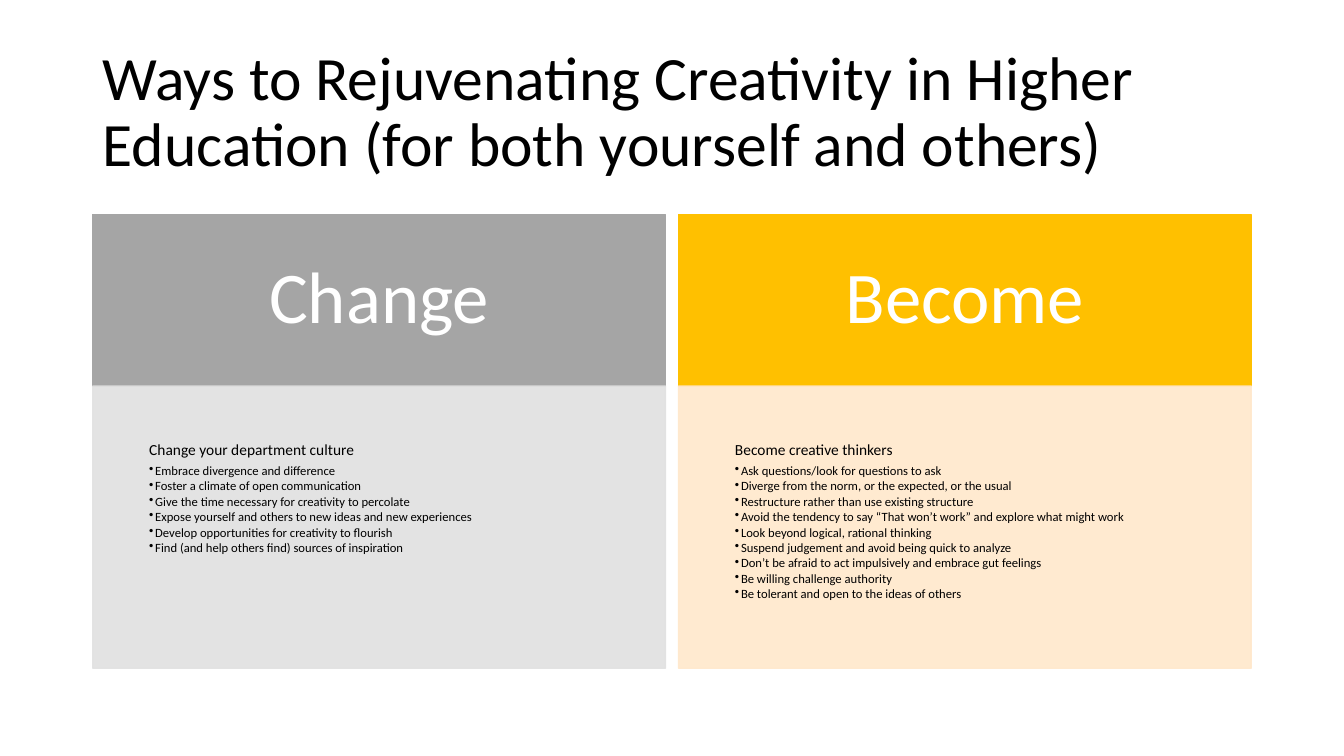
from dataclasses import dataclass

import pptx
import pptx.dml.color
import pptx.enum.shapes
import pptx.enum.text
import pptx.oxml.ns
import pptx.util
from lxml import etree

Inches = pptx.util.Inches
Pt = pptx.util.Pt
ALIGN = pptx.enum.text.PP_ALIGN
ANCHOR = pptx.enum.text.MSO_ANCHOR


@dataclass
class Panel:
    head: str
    lead: str
    points: list[str]
    dark: str
    pale: str


PANELS = [
    Panel("Change", "Change your department culture", [
        "Embrace divergence and difference",
        "Foster a climate of open communication",
        "Give the time necessary for creativity to percolate",
        "Expose yourself and others to new ideas and new experiences",
        "Develop opportunities for creativity to flourish",
        "Find (and help others find) sources of inspiration",
    ], "A5A5A5", "E1E1E1"),
    Panel("Become", "Become creative thinkers", [
        "Ask questions/look for questions to ask",
        "Diverge from the norm, or the expected, or the usual",
        "Restructure rather than use existing structure",
        "Avoid the tendency to say “That won’t work” and explore what might work",
        "Look beyond logical, rational thinking",
        "Suspend judgement and avoid being quick to analyze",
        "Don’t be afraid to act impulsively and embrace gut feelings",
        "Be willing challenge authority",
        "Be tolerant and open to the ideas of others",
    ], "FFC000", "FFE8CB"),
]
LEFT, TOP, WIDTH, STEP = 0.92, 2.13, 5.68, 5.81
HEAD, BODY = 1.7, 2.8


def color(code: str):
    return pptx.dml.color.RGBColor.from_string(code)


def setup(frame, anchor, side: float, edge: float) -> None:
    """Set wrapping, anchor and margins of a text frame."""
    form = {
        "word_wrap": True, "vertical_anchor": anchor,
        "margin_left": Inches(side), "margin_right": Inches(side),
        "margin_top": Inches(edge), "margin_bottom": Inches(edge),
    }
    for name, value in form.items():
        setattr(frame, name, value)


def write(para, text: str, size: float, ink: str = "000000",
          align=ALIGN.LEFT, after: float = 0) -> None:
    """Fill one paragraph with a single run."""
    form = {"alignment": align, "line_spacing": 0.9, "space_after": Pt(after)}
    for name, value in form.items():
        setattr(para, name, value)
    run = para.add_run()
    run.text = text
    for name, value in {"name": "Calibri", "size": Pt(size)}.items():
        setattr(run.font, name, value)
    run.font.color.rgb = color(ink)


def bullet(para) -> None:
    """Add a bullet with a hanging indent."""
    para.level = 1
    props = para._p.get_or_add_pPr()
    props.set("marL", str(Inches(0.06)))
    props.set("indent", str(-Inches(0.06)))
    etree.SubElement(props, pptx.oxml.ns.qn("a:buChar"), char="•")


def block(slide, left: float, top: float, height: float, tint: str,
          alpha: int = 100):
    """Draw a rectangle whose fill and line share one colour."""
    shape = slide.shapes.add_shape(
        pptx.enum.shapes.MSO_SHAPE.RECTANGLE,
        Inches(left), Inches(top), Inches(WIDTH), Inches(height))
    shape.shadow.inherit = False
    shape.line.width = Pt(1)
    for fill in (shape.fill, shape.line.fill):
        fill.solid()
        fill.fore_color.rgb = color(tint)
    if alpha < 100:
        tag = pptx.oxml.ns.qn("a:srgbClr")
        for node in shape._element.spPr.iter(tag):
            etree.SubElement(node, pptx.oxml.ns.qn("a:alpha"),
                             val=str(alpha * 1000))
    return shape


def draw(slide, panel: Panel, left: float) -> None:
    """Draw the heading block and the list below it."""
    frame = block(slide, left, TOP, HEAD, panel.dark).text_frame
    setup(frame, ANCHOR.MIDDLE, 0.45, 0.45)
    write(frame.paragraphs[0], panel.head, 52, "FFFFFF", ALIGN.CENTER)

    frame = block(slide, left, TOP + HEAD, BODY, panel.pale, 90).text_frame
    setup(frame, ANCHOR.TOP, 0.56, 0.56)
    write(frame.paragraphs[0], panel.lead, 11, after=4)
    for point in panel.points:
        para = frame.add_paragraph()
        bullet(para)
        write(para, point, 9, after=1.25)


def main() -> None:
    deck = pptx.Presentation()
    deck.slide_width, deck.slide_height = Inches(13.33), Inches(7.5)
    slide = deck.slides.add_slide(deck.slide_layouts[6])

    # Title
    title = slide.shapes.add_textbox(
        Inches(LEFT), Inches(0.4), Inches(11.5), Inches(1.45)).text_frame
    setup(title, ANCHOR.MIDDLE, 0.1, 0.05)
    write(title.paragraphs[0], "Ways to Rejuvenating Creativity in Higher "
          "Education (for both yourself and others)", 44)

    # Panels side by side
    for i, panel in enumerate(PANELS):
        draw(slide, panel, LEFT + i * STEP)

    deck.save("out.pptx")


if __name__ == "__main__":
    main()
